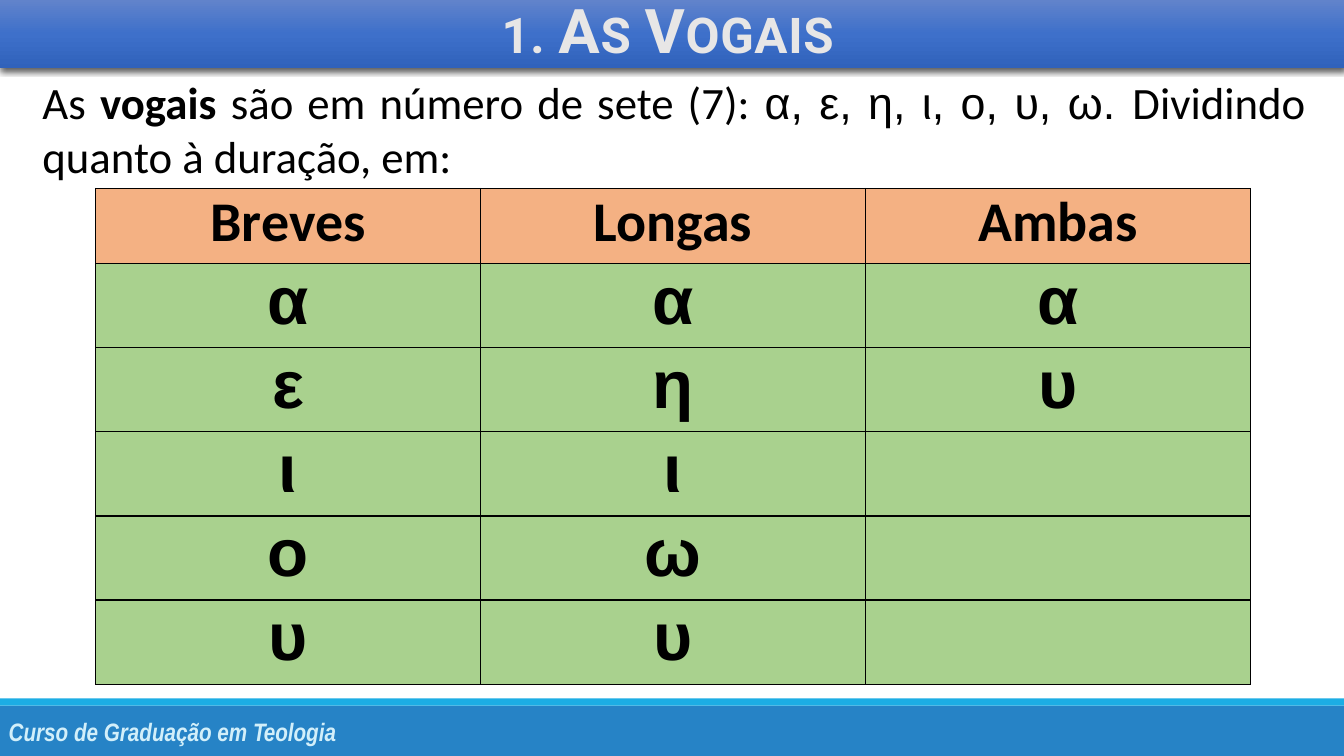
from copy import deepcopy
from typing import NamedTuple

from lxml.etree import SubElement
from pptx import Presentation
from pptx.dml.color import RGBColor
from pptx.enum.shapes import MSO_SHAPE as Shape
from pptx.enum.text import MSO_ANCHOR as Anchor, MSO_AUTO_SIZE as AutoSize, PP_ALIGN as Align
from pptx.oxml import parse_xml
from pptx.oxml.ns import nsdecls, qn
from pptx.util import Cm, Pt

COLOURS = {
    "text": "000000",
    "title": "E7E6E6",
    "banner top": "6183CB",
    "banner middle": "3E70CA",
    "banner bottom": "3062BB",
    "footer": "2683C6",
    "strip": "1CADE4",
    "course": "D2EFFA",
    "header": "F4B183",
    "vowel": "A9D18E",
}


class Box(NamedTuple):
    left: float
    top: float
    width: float
    height: float

    def lengths(self) -> list:
        return [Cm(value) for value in self]


class Bar(NamedTuple):
    box: Box
    colour: str


class Piece(NamedTuple):
    text: str
    font: str = "Calibri"
    bold: bool = False


SLIDE_WIDTH, SLIDE_HEIGHT = 33.87, 19.05
BARS = [
    Bar(Box(0, 17.78, SLIDE_WIDTH, 1.27), "footer"),
    Bar(Box(0, 17.6, SLIDE_WIDTH, 0.18), "strip"),
]
BANNER = Box(0, 0, SLIDE_WIDTH, 1.71)
COURSE = Box(-0.03, 17.93, 11.33, 1.02)
INTRO = Box(0.82, 1.75, 32.33, 3)
INTRO_PIECES = [
    Piece("As "),
    Piece("vogais ", bold=True),
    Piece("são em número de sete (7): "),
    Piece("α, ε, η, ι, ο, υ, ω. ", font="Arial"),
    Piece("Dividindo quanto à duração, em:"),
]
VOWELS = {
    "Breves": "αειου",
    "Longas": "αηιωυ",
    "Ambas": "αυ",
}
TABLE_LEFT, TABLE_TOP = 2.41, 4.75
COLUMN_WIDTH, HEADER_HEIGHT, VOWEL_HEIGHT = 9.7, 1.89, 2.12


def rgb(name: str) -> RGBColor:
    return RGBColor.from_string(COLOURS[name])


def write(paragraph, text: str, *, font: str = "Calibri", size: float = 32,
          colour: str = "text", bold: bool = False, italic: bool = False):
    run = paragraph.add_run()
    run.text = text
    run.font.name = font
    run.font.size = Pt(size)
    run.font.bold = bold
    run.font.italic = italic
    run.font.color.rgb = rgb(colour)
    return run


def add_bar(slide, bar: Bar) -> None:
    shape = slide.shapes.add_shape(Shape.RECTANGLE, *bar.box.lengths())
    shape.shadow.inherit = False
    shape.fill.solid()
    shape.fill.fore_color.rgb = rgb(bar.colour)
    shape.line.fill.background()


def add_text_frame(slide, box: Box):
    frame = slide.shapes.add_textbox(*box.lengths()).text_frame
    frame.word_wrap = True
    return frame


def paint_banner(banner) -> None:
    """Give the title a three-stop vertical gradient and a soft shadow below."""
    fill = banner.fill
    fill.gradient()
    fill.gradient_angle = 270
    stops = banner.element.spPr.find(qn("a:gradFill")).find(qn("a:gsLst"))
    stops.append(deepcopy(stops[-1]))
    for index, (stop, part) in enumerate(zip(fill.gradient_stops, ("top", "middle", "bottom"))):
        stop.position = index / 2
        stop.color.rgb = rgb(f"banner {part}")
    banner.line.fill.background()
    banner.element.spPr.append(parse_xml(
        f'<a:effectLst {nsdecls("a")}>'
        f'<a:outerShdw blurRad="{Pt(4.5)}" dist="{Pt(1.5)}" dir="5400000" algn="ctr" rotWithShape="0">'
        '<a:srgbClr val="000000"><a:alpha val="63000"/></a:srgbClr>'
        '</a:outerShdw></a:effectLst>'))


def set_title(banner) -> None:
    banner.left, banner.top, banner.width, banner.height = BANNER.lengths()
    paint_banner(banner)
    frame = banner.text_frame
    frame.auto_size = AutoSize.NONE
    frame.vertical_anchor = Anchor.MIDDLE
    heading = frame.paragraphs[0]
    heading.alignment = Align.CENTER
    heading.line_spacing = 0.9
    run = write(heading, "1. As Vogais", font="Roboto", size=44, colour="title", bold=True)
    properties = run.font._element
    properties.set("cap", "small")
    properties.set("spc", "50")


def add_borders(cell) -> None:
    properties = cell._tc.get_or_add_tcPr()
    for index, side in enumerate(("lnL", "lnR", "lnT", "lnB")):
        border = SubElement(properties, qn(f"a:{side}"), w=str(Pt(1)))
        line_fill = SubElement(border, qn("a:solidFill"))
        SubElement(line_fill, qn("a:srgbClr"), val=COLOURS["text"])
        properties.insert(index, border)


def fill_cell(cell, text: str, colour: str, font: str, size: float) -> None:
    cell.margin_left = cell.margin_right = Cm(0.18)
    cell.margin_top = cell.margin_bottom = 0
    cell.fill.solid()
    cell.fill.fore_color.rgb = rgb(colour)
    add_borders(cell)
    if text:
        paragraph = cell.text_frame.paragraphs[0]
        paragraph.alignment = Align.CENTER
        write(paragraph, text, font=font, size=size, bold=True)


def add_vowel_table(slide) -> None:
    vowel_rows = max(len(vowels) for vowels in VOWELS.values())
    box = Box(TABLE_LEFT, TABLE_TOP, COLUMN_WIDTH * len(VOWELS),
              HEADER_HEIGHT + VOWEL_HEIGHT * vowel_rows)
    table = slide.shapes.add_table(vowel_rows + 1, len(VOWELS), *box.lengths()).table
    table.first_row = table.horz_banding = False
    for index, row in enumerate(table.rows):
        row.height = Cm(VOWEL_HEIGHT if index else HEADER_HEIGHT)
    for column, (duration, vowels) in enumerate(VOWELS.items()):
        table.columns[column].width = Cm(COLUMN_WIDTH)
        fill_cell(table.cell(0, column), duration, "header", "Calibri", 40)
        for row, vowel in enumerate(vowels.ljust(vowel_rows), start=1):
            fill_cell(table.cell(row, column), vowel.strip(), "vowel", "Arial", 48)


def main() -> None:
    presentation = Presentation()
    presentation.slide_width = Cm(SLIDE_WIDTH)
    presentation.slide_height = Cm(SLIDE_HEIGHT)
    slide = presentation.slides.add_slide(presentation.slide_layouts[5])
    set_title(slide.shapes.title)

    for bar in BARS:
        add_bar(slide, bar)
    course = add_text_frame(slide, COURSE).paragraphs[0]
    write(course, "Curso de Graduação em Teologia", font="Arial Narrow", size=18,
          colour="course", bold=True, italic=True)

    add_vowel_table(slide)

    intro_frame = add_text_frame(slide, INTRO)
    intro_frame.vertical_anchor = Anchor.MIDDLE
    intro = intro_frame.paragraphs[0]
    intro.alignment = Align.JUSTIFY
    for piece in INTRO_PIECES:
        write(intro, piece.text, font=piece.font, bold=piece.bold)

    presentation.save("out.pptx")


if __name__ == "__main__":
    main()
